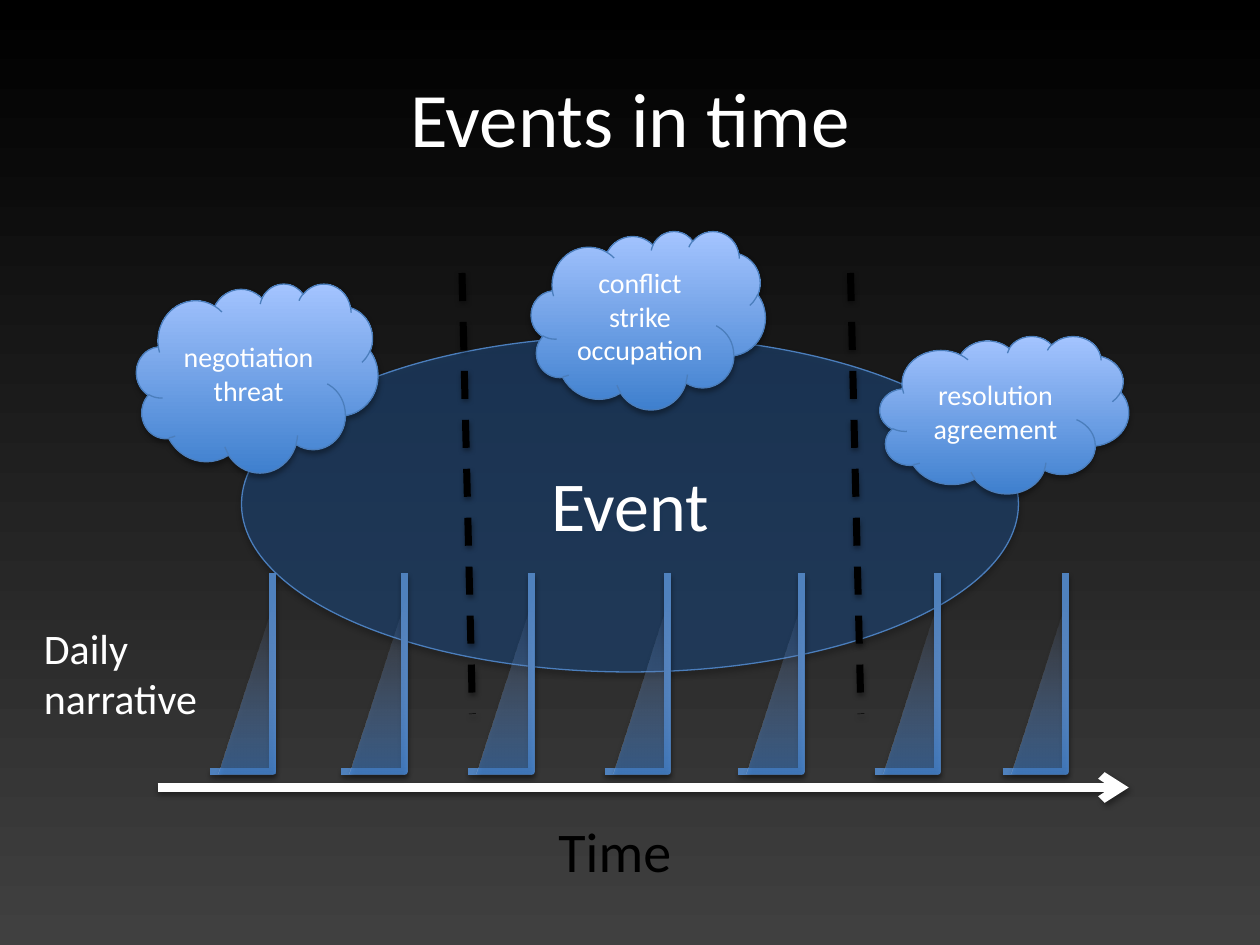
from dataclasses import dataclass

from lxml import etree
from pptx import Presentation
from pptx.dml.color import RGBColor
from pptx.enum.dml import MSO_LINE
from pptx.enum.shapes import MSO_CONNECTOR, MSO_SHAPE
from pptx.enum.text import MSO_ANCHOR, PP_ALIGN
from pptx.oxml.ns import qn
from pptx.util import Inches, Pt

CLOUD, OVAL, TRIANGLE = MSO_SHAPE.CLOUD, MSO_SHAPE.OVAL, MSO_SHAPE.RIGHT_TRIANGLE
STRAIGHT, ELBOW = MSO_CONNECTOR.STRAIGHT, MSO_CONNECTOR.ELBOW
LEFT, CENTER = PP_ALIGN.LEFT, PP_ALIGN.CENTER
TOP, MIDDLE = MSO_ANCHOR.TOP, MSO_ANCHOR.MIDDLE
DASH = MSO_LINE.DASH

COLUMNS, ROWS = 120, 90


@dataclass(frozen=True)
class Theme:
    font: str = "Calibri"
    white: str = "FFFFFF"
    black: str = "000000"
    charcoal: str = "404040"
    navy: str = "1F497D"
    outline: str = "4B7EBC"
    blue: str = "4F81BD"
    deep: str = "3F80CE"
    pale: str = "A4C4FF"
    title: int = 44
    event: int = 40
    axis: int = 32
    label: int = 24
    cloud: int = 16


class SlideBuilder:
    def __init__(self, prs, theme):
        self.theme = theme
        self.col = prs.slide_width / COLUMNS
        self.row = prs.slide_height / ROWS
        self.slide = prs.slides.add_slide(prs.slide_layouts[6])

    def box(self, x, y, w, h):
        return (round(x * self.col), round(y * self.row),
                round(w * self.col), round(h * self.row))

    def gradient(self, fill, start, end, angle):
        fill.gradient()
        fill.gradient_angle = angle
        for stop, color, position in zip(fill.gradient_stops, (start, end), (0, 1)):
            stop.color.rgb = RGBColor.from_string(color)
            stop.position = position

    def opacity(self, shape, *percents):
        fill = shape._element.spPr.find(qn("a:gradFill"))
        if fill is None:
            fill = shape._element.spPr.find(qn("a:solidFill"))
        for color, percent in zip(fill.iter(qn("a:srgbClr")), percents):
            etree.SubElement(color, qn("a:alpha"), val=str(percent * 1000))

    def shadow(self, shape, distance, percent):
        effects = etree.SubElement(shape._element.spPr, qn("a:effectLst"))
        outer = etree.SubElement(effects, qn("a:outerShdw"), blurRad=str(Pt(3.1)),
                                 dist=str(Pt(distance)), dir="5400000", rotWithShape="0")
        color = etree.SubElement(outer, qn("a:srgbClr"), val=self.theme.black)
        etree.SubElement(color, qn("a:alpha"), val=str(percent * 1000))

    def set_text(self, shape, text, size, color, align=CENTER, anchor=MIDDLE, wrap=True):
        frame = shape.text_frame
        frame.text = text
        frame.word_wrap = wrap
        frame.vertical_anchor = anchor
        paragraph = frame.paragraphs[0]
        paragraph.alignment = align
        font = paragraph.runs[0].font
        font.name, font.size = self.theme.font, Pt(size)
        font.color.rgb = RGBColor.from_string(color)

    def label(self, place, text, size, color, **layout):
        self.set_text(self.slide.shapes.add_textbox(*self.box(*place)),
                      text, size, color, **layout)

    def shape(self, kind, place):
        shape = self.slide.shapes.add_shape(kind, *self.box(*place))
        shape.line.color.rgb = RGBColor.from_string(self.theme.outline)
        shape.line.width = Pt(0.75)
        return shape

    def ellipse(self, place, text):
        ellipse = self.shape(OVAL, place)
        ellipse.fill.solid()
        ellipse.fill.fore_color.rgb = RGBColor.from_string(self.theme.navy)
        self.opacity(ellipse, 59)
        self.shadow(ellipse, 1.8, 35)
        self.set_text(ellipse, text, self.theme.event, self.theme.white)

    def cloud(self, place, text):
        cloud = self.shape(CLOUD, place)
        self.gradient(cloud.fill, self.theme.deep, self.theme.pale, 90)
        self.shadow(cloud, 1.8, 35)
        self.set_text(cloud, text, self.theme.cloud, self.theme.white)

    def line(self, start, end, color, width, kind=STRAIGHT):
        line = self.slide.shapes.add_connector(kind, *self.box(*start, *end))
        line.line.color.rgb = RGBColor.from_string(color)
        line.line.width = Pt(width)
        self.shadow(line, 1.6, 38)
        return line

    def arrow(self, start, end):
        arrow = self.line(start, end, self.theme.white, 5)
        outline = arrow._element.spPr.find(qn("a:ln"))
        etree.SubElement(outline, qn("a:tailEnd"), type="arrow")

    def divider(self, start, end):
        self.line(start, end, self.theme.black, 4).line.dash_style = DASH

    def day(self, x, top, bottom):
        """An L-shaped marker with a fading wedge in its corner."""
        corner = self.line((x, bottom), (x + 6, top), self.theme.blue, 4, ELBOW)
        geometry = corner._element.spPr.find(qn("a:prstGeom"))
        guides = geometry.find(qn("a:avLst"))
        etree.SubElement(guides, qn("a:gd"), name="adj1", fmla="val 100000")

        wedge = self.shape(TRIANGLE, (x - 5, 62.5, 17, 5.4))
        wedge.rotation = 270
        wedge.line.fill.background()
        self.gradient(wedge.fill, self.theme.deep, self.theme.pale, 0)
        self.opacity(wedge, 55, 0)
        self.shadow(wedge, 1.8, 35)


def main():
    prs = Presentation()
    prs.slide_width, prs.slide_height = Inches(10), Inches(7.5)
    theme = Theme()
    page = SlideBuilder(prs, theme)

    # Background and title
    page.gradient(page.slide.background.fill, theme.charcoal, theme.black, 90)
    page.label((6, 3.6, 108, 15), "Events in time", theme.title, theme.white)

    # Event and time axis
    page.ellipse((23, 32, 74, 32), "Event")
    page.arrow((15, 75), (107.5, 75))
    page.label((52, 77.2, 13.3, 7.7), "Time", theme.axis, theme.black,
               align=LEFT, anchor=TOP, wrap=False)

    # Phase dividers
    for x in (44, 81):
        page.divider((x, 26), (x + 1, 68))

    # What happens in each phase
    for place, words in (
        ((13, 27, 23, 18), "negotiation threat"),
        ((50.6, 22, 22.3, 17), "conflict strike occupation"),
        ((83.8, 32, 23.7, 15), "resolution agreement"),
    ):
        page.cloud(place, words)

    # Daily narrative
    page.label((3, 58.7, 20, 11), "Daily narrative", theme.label, theme.white,
               align=LEFT, anchor=TOP)
    for x in (20, 32.5, 44.6, 57.6, 70.3, 83.3, 95.5):
        page.day(x, 54.6, 73.5)

    prs.save("out.pptx")


if __name__ == "__main__":
    main()
